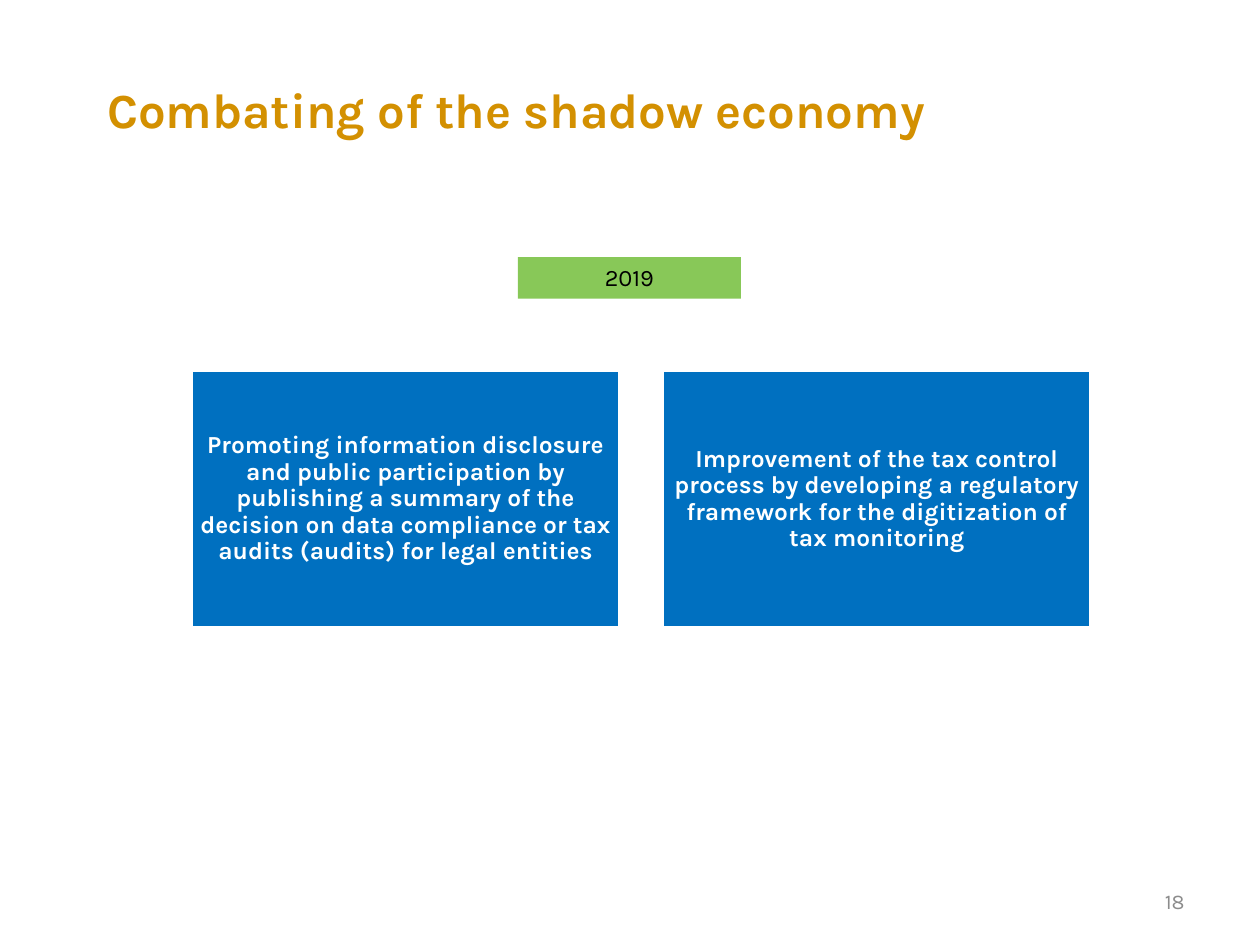
from dataclasses import dataclass

from pptx import Presentation
from pptx.dml.color import RGBColor
from pptx.enum.shapes import MSO_SHAPE
from pptx.enum.text import MSO_ANCHOR, PP_ALIGN
from pptx.util import Inches, Pt


@dataclass(frozen=True)
class Theme:
    font: str = "Karla"
    white: str = "FFFFFF"
    black: str = "000000"
    gold: str = "D39001"
    blue: str = "0070C0"
    green: str = "88C858"
    gray: str = "8C8C8C"
    head: float = 28
    body: float = 14
    year: float = 13.5
    small: float = 12


@dataclass(frozen=True)
class Box:
    left: float
    top: float
    width: float
    height: float


THEME = Theme()
GOALS = (
    "Promoting information disclosure and public participation by publishing "
    "a summary of the decision on data compliance or tax audits (audits) for legal entities",
    "Improvement of the tax control process by developing a regulatory "
    "framework for the digitization of tax monitoring",
)
FIRST = Box(1.52, 2.94, 3.4, 2.04)
STEP = 3.74


def color(code: str) -> RGBColor:
    return RGBColor.from_string(code)


def lengths(box: Box) -> tuple:
    return tuple(Inches(n) for n in (box.left, box.top, box.width, box.height))


def write(shape, text: str, *, size: float, ink: str, bold: bool = False,
          align=PP_ALIGN.CENTER, anchor=MSO_ANCHOR.MIDDLE,
          inset: tuple = (0.1, 0.05), lead: float = 1.0) -> None:
    frame = shape.text_frame
    frame.word_wrap = True
    frame.vertical_anchor = anchor
    frame.margin_left = frame.margin_right = Inches(inset[0])
    frame.margin_top = frame.margin_bottom = Inches(inset[1])
    para = frame.paragraphs[0]
    para.alignment = align
    para.line_spacing = lead
    para.space_before = Pt(0)
    run = para.add_run()
    run.text = text
    run.font.name = THEME.font
    run.font.size = Pt(size)
    run.font.bold = bold
    run.font.color.rgb = color(ink)


def panel(slide, box: Box, fill: str, edge: str = ""):
    shape = slide.shapes.add_shape(MSO_SHAPE.RECTANGLE, *lengths(box))
    shape.shadow.inherit = False
    shape.fill.solid()
    shape.fill.fore_color.rgb = color(fill)
    if edge:
        shape.line.color.rgb = color(edge)
        shape.line.width = Pt(2)
    else:
        shape.line.fill.background()
    return shape


def main() -> None:
    deck = Presentation()
    deck.slide_width, deck.slide_height = Inches(10), Inches(7.5)
    slide = deck.slides.add_slide(deck.slide_layouts[5])

    title = slide.shapes.title
    title.left, title.top, title.width, title.height = lengths(Box(0.75, 0.52, 6.85, 0.69))
    title.fill.solid()
    title.fill.fore_color.rgb = color(THEME.white)
    write(title, "Combating of the shadow economy", size=THEME.head,
          ink=THEME.gold, bold=True, align=PP_ALIGN.LEFT)

    year = panel(slide, Box(4.11, 2.04, 1.77, 0.33), THEME.green)
    write(year, "2019", size=THEME.year, ink=THEME.black, anchor=MSO_ANCHOR.TOP)

    for i, goal in enumerate(GOALS):
        box = Box(FIRST.left + i * STEP, FIRST.top, FIRST.width, FIRST.height)
        write(panel(slide, box, THEME.blue, THEME.white), goal, size=THEME.body,
              ink=THEME.white, bold=True, inset=(0.06, 0.06), lead=0.9)

    page = slide.shapes.add_textbox(*lengths(Box(7.17, 6.95, 2.33, 0.4)))
    write(page, "18", size=THEME.small, ink=THEME.gray, align=PP_ALIGN.RIGHT)

    deck.save("out.pptx")


if __name__ == "__main__":
    main()
